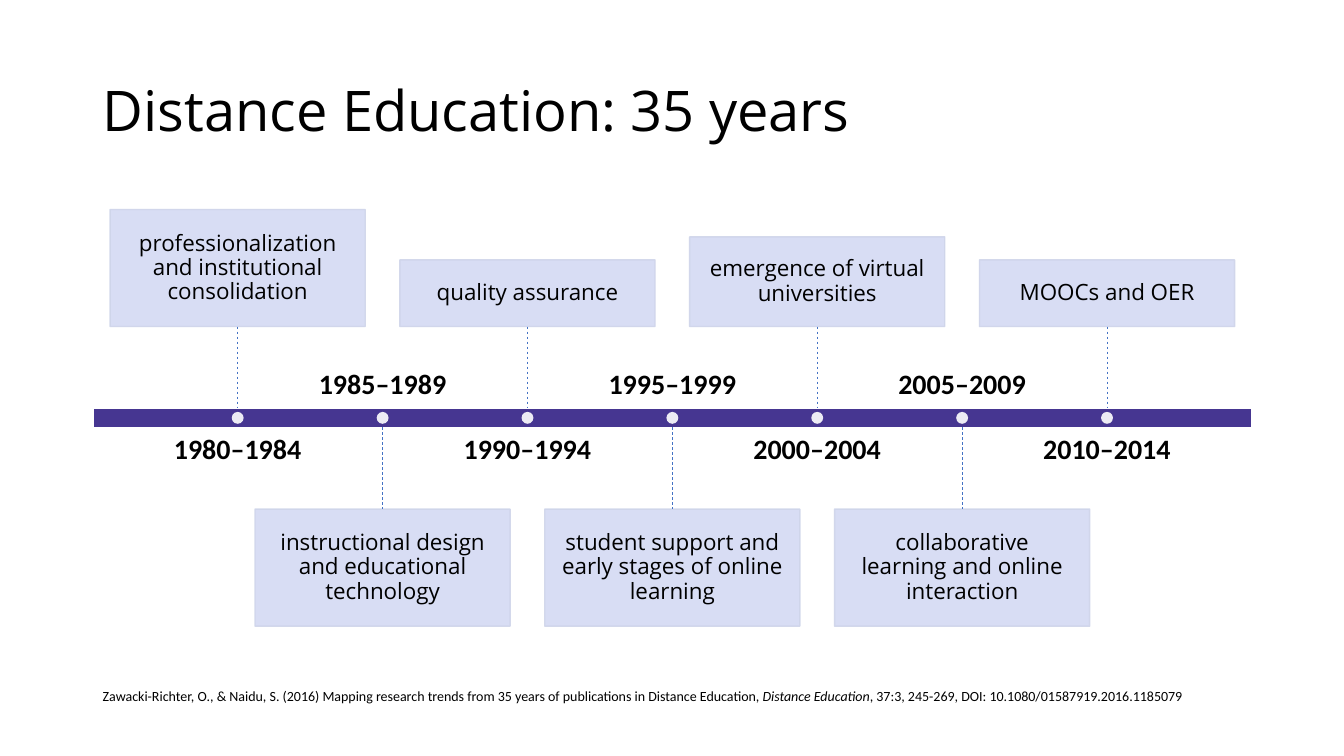
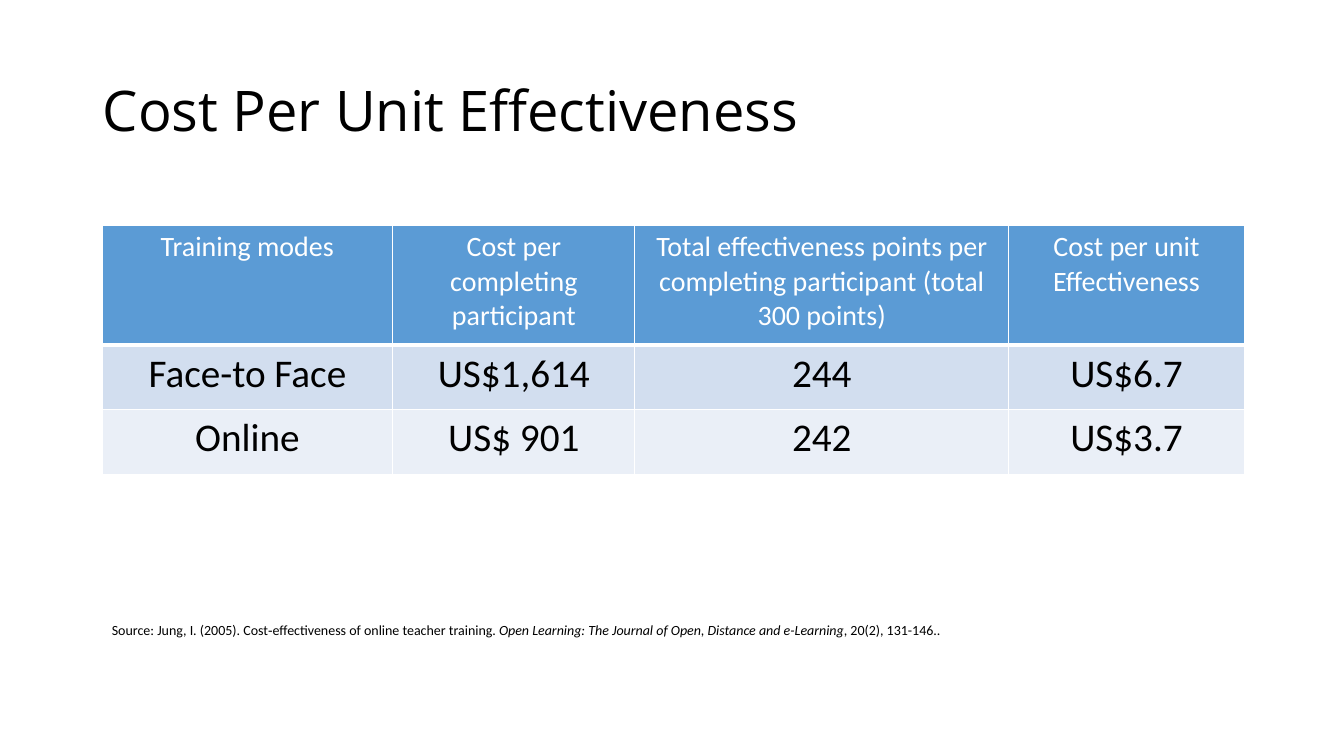
from lxml import etree
from pptx import Presentation
from pptx.dml.color import RGBColor
from pptx.enum.dml import MSO_LINE
from pptx.enum.shapes import MSO_CONNECTOR, MSO_SHAPE
from pptx.enum.text import MSO_ANCHOR as Anchor, PP_ALIGN as Align
from pptx.oxml.ns import qn
from pptx.util import Cm, Pt

BLACK, WHITE = "000000", "FFFFFF"
AXIS, CARD, CARD_EDGE, STEM = "463691", "D4DAF3", "CFD5EA", "4472C4"
HEADER, ROW_FILLS = "5B9BD5", ("D2DEEF", "EAEFF7")
HEADING_FONT, BODY_FONT = "Open Sans", "Calibri"
TITLE_BOX = (2.34, 1.02, 29.21, 3.68)

STEM_LENGTH, LABEL_GAP = 2.06, 0.2
CARD_WIDTH, LABEL_WIDTH, LABEL_HEIGHT, DOT = 6.43, 5.84, 1.37, 0.3
MILESTONES = [
    ("1980–1984", "professionalization and institutional consolidation", 2.95),
    ("1985–1989", "instructional design and educational technology", 2.95),
    ("1990–1994", "quality assurance", 1.68),
    ("1995–1999", "student support and early stages of online learning", 2.95),
    ("2000–2004", "emergence of virtual universities", 2.26),
    ("2005–2009", "collaborative learning and online interaction", 2.95),
    ("2010–2014", "MOOCs and OER", 1.68),
]
COST_ROWS = [
    ("Training modes", "Cost per completing participant",
     "Total effectiveness points per completing participant (total 300 points)",
     "Cost per unit Effectiveness"),
    ("Face-to Face", "US$1,614", "244", "US$6.7"),
    ("Online", "US$ 901", "242", "US$3.7"),
]
COLUMN_WIDTHS = (7.33, 6.1, 9.42, 5.94)
ROW_HEIGHTS = (3.02, 1.63, 1.63)


def rgb(color):
    return RGBColor.from_string(color)


def lengths(*values):
    return [Cm(value) for value in values]


def paint(target, color, opacity=100):
    target.solid()
    target.fore_color.rgb = rgb(color)
    if opacity < 100:
        color_element = target._xPr.find(qn("a:solidFill"))[0]
        etree.SubElement(color_element, qn("a:alpha"), val=str(opacity * 1000))


def write(frame, *pieces, size, font=BODY_FONT, color=BLACK, bold=False,
          align=Align.LEFT, anchor=Anchor.TOP, spacing=None, inset=None):
    frame.word_wrap = True
    frame.vertical_anchor = anchor
    if inset is not None:
        frame.margin_left = frame.margin_right = Cm(inset)
        frame.margin_top = frame.margin_bottom = Cm(inset)
    paragraph = frame.paragraphs[0]
    paragraph.alignment = align
    if spacing:
        paragraph.line_spacing = spacing
    for index, piece in enumerate(pieces):
        run = paragraph.add_run()
        run.text = piece
        run.font.name, run.font.size = font, Pt(size)
        run.font.color.rgb = rgb(color)
        run.font.bold = bold
        run.font.italic = index % 2 == 1


def add_text(slide, box, *pieces, **style):
    shape = slide.shapes.add_textbox(*lengths(*box))
    write(shape.text_frame, *pieces, **style)


def add_block(slide, kind, box, color, opacity=100, edge=None):
    shape = slide.shapes.add_shape(kind, *lengths(*box))
    shape.shadow.inherit = False
    paint(shape.fill, color, opacity)
    if edge:
        shape.line.width = Pt(1)
        paint(shape.line.fill, edge, opacity)
    else:
        shape.line.fill.background()
    return shape


def add_stem(slide, x, start, end):
    stem = slide.shapes.add_connector(
        MSO_CONNECTOR.STRAIGHT, *lengths(x, start, x, end))
    stem.line.color.rgb = rgb(STEM)
    stem.line.width = Pt(0.5)
    stem.line.dash_style = MSO_LINE.DASH
    etree.SubElement(stem._element.spPr, qn("a:effectLst"))


def add_milestone(slide, x, axis_top, axis_bottom, above, period, theme, height):
    if above:
        stem_start, stem_end = axis_top - STEM_LENGTH, axis_top
        card_top = stem_start - height
        label_top, label_anchor = axis_bottom + LABEL_GAP, Anchor.TOP
    else:
        stem_start, stem_end = axis_bottom, axis_bottom + STEM_LENGTH
        card_top = stem_end
        label_top = axis_top - LABEL_GAP - LABEL_HEIGHT
        label_anchor = Anchor.BOTTOM
    add_text(slide, (x - LABEL_WIDTH / 2, label_top, LABEL_WIDTH, LABEL_HEIGHT),
             period, size=20, bold=True, align=Align.CENTER,
             anchor=label_anchor, spacing=0.9, inset=0)
    card = add_block(slide, MSO_SHAPE.RECTANGLE,
                     (x - CARD_WIDTH / 2, card_top, CARD_WIDTH, height),
                     CARD, opacity=90, edge=CARD_EDGE)
    write(card.text_frame, theme, size=16, font=HEADING_FONT, align=Align.CENTER,
          anchor=Anchor.MIDDLE, spacing=0.9, inset=0.43)
    add_stem(slide, x, stem_start, stem_end)
    middle = (axis_top + axis_bottom) / 2
    add_block(slide, MSO_SHAPE.OVAL, (x - DOT / 2, middle - DOT / 2, DOT, DOT),
              WHITE, opacity=90)


def add_timeline(slide, box):
    left, top, width, height = box
    add_block(slide, MSO_SHAPE.RECTANGLE, box, AXIS, edge=WHITE)
    pitch = width / (len(MILESTONES) + 1)
    for index, milestone in enumerate(MILESTONES):
        add_milestone(slide, left + pitch * (index + 1), top, top + height,
                      index % 2 == 0, *milestone)


def add_borders(cell, bottom):
    properties = cell._tc.get_or_add_tcPr()
    for side, width in (("L", 1), ("R", 1), ("T", 1), ("B", bottom)):
        border = etree.SubElement(properties, qn(f"a:ln{side}"), w=str(Pt(width)))
        fill = etree.SubElement(border, qn("a:solidFill"))
        etree.SubElement(fill, qn("a:srgbClr"), val=WHITE)


def add_cost_table(slide, left, top):
    box = (left, top, sum(COLUMN_WIDTHS), sum(ROW_HEIGHTS))
    table = slide.shapes.add_table(
        len(COST_ROWS), len(COLUMN_WIDTHS), *lengths(*box)).table
    table.horz_banding = table.first_row = False
    for column, width in zip(table.columns, COLUMN_WIDTHS):
        column.width = Cm(width)
    for index, (row, height, texts) in enumerate(
            zip(table.rows, ROW_HEIGHTS, COST_ROWS)):
        row.height = Cm(height)
        heading = index == 0
        for cell, text in zip(row.cells, texts):
            add_borders(cell, bottom=3 if heading else 1)
            paint(cell.fill, HEADER if heading else ROW_FILLS[index - 1])
            write(cell.text_frame, text, size=20 if heading else 28,
                  color=WHITE if heading else BLACK, align=Align.CENTER)


def add_titled_slide(presentation, title):
    slide = presentation.slides.add_slide(presentation.slide_layouts[6])
    add_text(slide, TITLE_BOX, title, size=40, font=HEADING_FONT,
             anchor=Anchor.MIDDLE, spacing=0.9)
    return slide


def add_citation(slide, left, top, width, *pieces):
    add_text(slide, (left, top, width, 0.69), *pieces, size=10)


def build_timeline_slide(presentation):
    slide = add_titled_slide(presentation, "Distance Education: 35 years")
    add_timeline(slide, (2.34, 10.29, 29.21, 0.48))
    add_citation(
        slide, 2.34, 17.2, 28.93,
        "Zawacki-Richter, O., & Naidu, S. (2016) Mapping research trends from "
        "35 years of publications in Distance Education, ",
        "Distance Education",
        ", 37:3, 245-269, DOI: 10.1080/01587919.2016.1185079")


def build_cost_slide(presentation):
    slide = add_titled_slide(presentation, "Cost Per Unit Effectiveness")
    add_cost_table(slide, 2.57, 5.67)
    add_citation(
        slide, 2.57, 15.54, 21.82,
        "Source: Jung, I. (2005). Cost‐effectiveness of online teacher training. ",
        "Open Learning: The Journal of Open, Distance and e-Learning",
        ", 20(2), 131-146..")


def main():
    presentation = Presentation()
    presentation.slide_width, presentation.slide_height = lengths(33.87, 19.05)
    build_timeline_slide(presentation)
    build_cost_slide(presentation)
    presentation.save("out.pptx")


if __name__ == "__main__":
    main()
